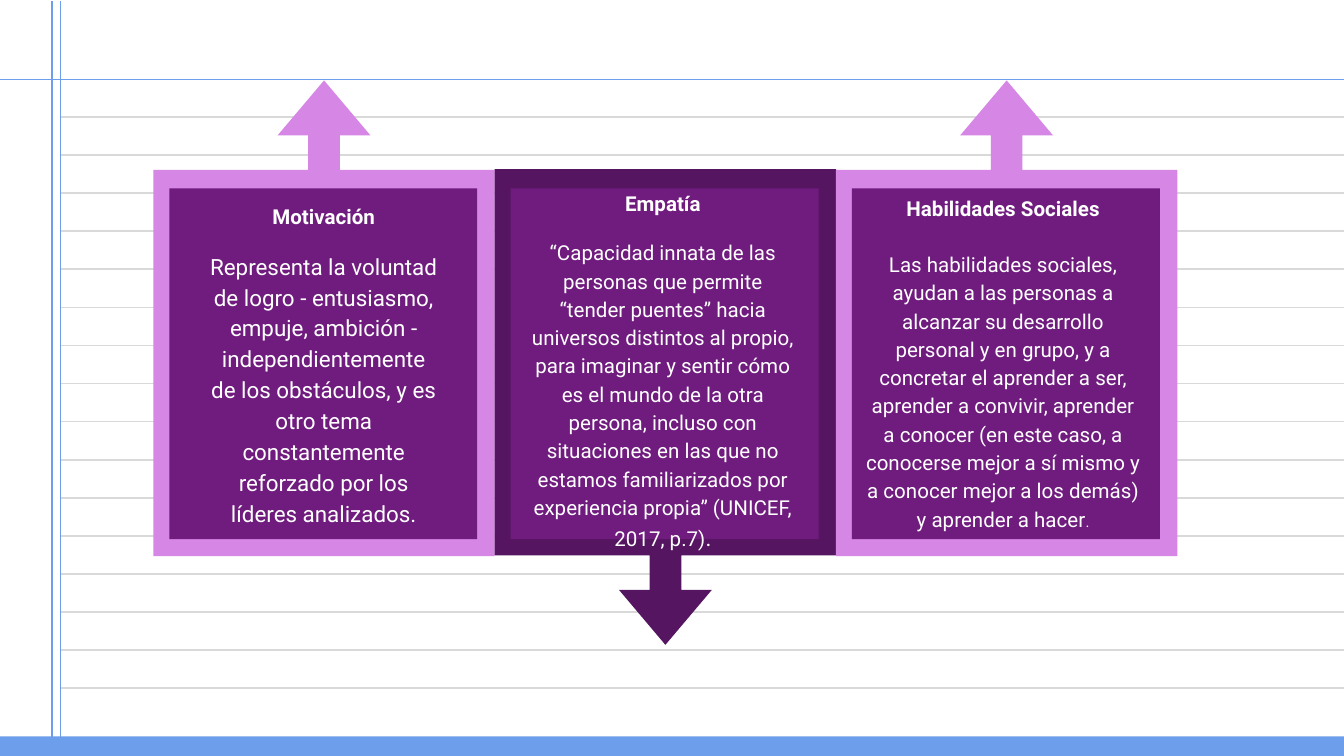
import pptx
import pptx.util
import pptx.dml.color
import pptx.enum.shapes
import pptx.enum.text
import pptx.oxml.ns
import lxml.etree

Cm, Pt = pptx.util.Cm, pptx.util.Pt
KIND = pptx.enum.shapes.MSO_SHAPE

# Content: runs are (text, size)
CARDS = [
    dict(title="Motivación", tone="lilac", turn=270, top=2.79, gap=11,
         box=(3.68, 3.53, 4.88, 6.63), after=0,
         body=[("Representa la voluntad de logro - entusiasmo, empuje, "
                "ambición - independientemente de los obstáculos, y es otro "
                "tema constantemente reforzado por los líderes analizados.", 12)]),
    dict(title="Empatía", tone="dark", turn=90, top=4.47, gap=11,
         box=(9.8, 3.3, 5.46, 6.86), after=16,
         body=[("“Capacidad innata de las personas que permite “tender "
                "puentes” hacia universos distintos al propio, para imaginar "
                "y sentir cómo es el mundo de la otra persona, incluso con "
                "situaciones en las que no estamos familiarizados por "
                "experiencia propia” (UNICEF, 2017, p.7)", 11), (".", 12)]),
    dict(title="Habilidades Sociales", tone="lilac", turn=270, top=2.79, gap=15,
         box=(16.1, 3.38, 5.72, 5.54), after=0,
         body=[("Las habilidades sociales, ayudan a las personas a alcanzar "
                "su desarrollo personal y en grupo, y a concretar el aprender "
                "a ser, aprender a convivir, aprender a conocer (en este "
                "caso, a conocerse mejor a sí mismo y a conocer mejor a los "
                "demás) y aprender a hacer", 11), (".", 8)]),
]

HUES = dict(white="FFFFFF", grey="D9D9D9", blue="6D9EEB",
            lilac="D686E4", dark="551561", plum="701C7F")
FONT = "Roboto"
WIDE, HIGH = 25.4, 14.29
EDGE = 1.14             # right margin line, where the rules start
STEP = 6.45             # from one card to the next

deck = pptx.Presentation()
deck.slide_width, deck.slide_height = Cm(WIDE), Cm(HIGH)
slide = deck.slides.add_slide(deck.slide_layouts[6])


def hue(name):
    return pptx.dml.color.RGBColor.from_string(HUES[name])


def rule(x1, y1, x2, y2, tone, width):
    line = slide.shapes.add_connector(
        pptx.enum.shapes.MSO_CONNECTOR.STRAIGHT, Cm(x1), Cm(y1), Cm(x2), Cm(y2))
    line.line.color.rgb = hue(tone)
    line.line.width = Pt(width)
    props = line._element.spPr
    lxml.etree.SubElement(props, pptx.oxml.ns.qn("a:effectLst"))


def block(kind, x, y, w, h, tone, turn=0, adjust=()):
    part = slide.shapes.add_shape(kind, Cm(x), Cm(y), Cm(w), Cm(h))
    part.shadow.inherit = False
    part.fill.solid()
    part.fill.fore_color.rgb = hue(tone)
    part.line.fill.background()
    part.rotation = turn
    for i, value in enumerate(adjust):
        part.adjustments[i] = value


def write(para, text, size=11, bold=False, tone="white"):
    run = para.add_run()
    run.text = text
    run.font.name, run.font.size, run.font.bold = FONT, Pt(size), bold
    run.font.color.rgb = hue(tone)
    para.alignment = pptx.enum.text.PP_ALIGN.CENTER
    para.line_spacing = 1.15


# Notebook page
for i in range(16):
    y = 2.21 + i * 0.72
    rule(EDGE, y, WIDE, y, "grey", 0.86)
for x in (0.98, EDGE):
    rule(x, 0.02, x, HIGH, "blue", 0.75)
rule(0, 1.5, WIDE, 1.5, "blue", 0.75)
block(KIND.RECTANGLE, 0, 13.92, WIDE, HIGH - 13.92, "blue")

# Cards: arrow frame, inner panel, text
for i, card in enumerate(CARDS):
    shift = i * STEP
    block(KIND.RIGHT_ARROW_CALLOUT, 1.63 + shift, card["top"], 8.99, 6.45,
          card["tone"], turn=card["turn"], adjust=(0.093, 0.136, 0.161, 0.812))
    block(KIND.SNIP_1_RECTANGLE, 3.2 + shift, 3.56, 5.82, 6.63, "plum", adjust=(0,))

    frame = slide.shapes.add_textbox(*map(Cm, card["box"])).text_frame
    frame.word_wrap = True
    frame.margin_left = frame.margin_right = Cm(0.25)
    frame.margin_top = frame.margin_bottom = Cm(0.25)
    head = frame.paragraphs[0]
    write(head, card["title"], bold=True)
    head.space_after = Pt(card["gap"])
    body = frame.add_paragraph()
    for text, size in card["body"]:
        write(body, text, size=size)
    body.space_after = Pt(card["after"])

deck.save("out.pptx")
